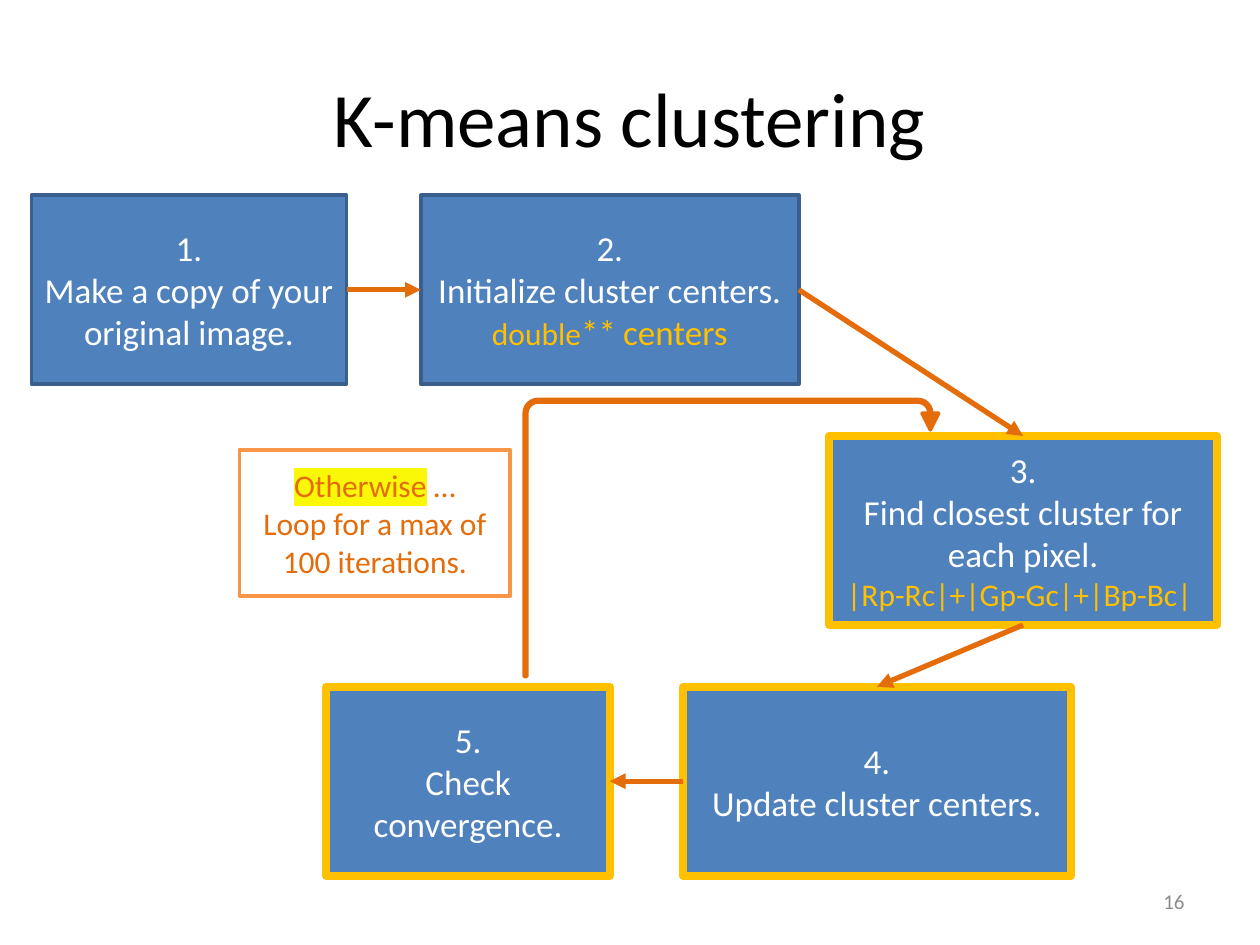
from lxml.etree import SubElement
from pptx import Presentation
from pptx.dml.color import RGBColor
from pptx.enum.shapes import MSO_CONNECTOR, MSO_SHAPE
from pptx.enum.text import MSO_ANCHOR, PP_ALIGN
from pptx.oxml.ns import qn
from pptx.util import Inches, Pt

FONT = "Calibri"
WHITE = RGBColor(0xFF, 0xFF, 0xFF)
BLACK = RGBColor(0, 0, 0)
GRAY = RGBColor(0x8C, 0x8C, 0x8C)
BLUE = RGBColor(0x4F, 0x81, 0xBD)
NAVY = RGBColor(0x3A, 0x5F, 0x8C)
GOLD = RGBColor(0xFF, 0xC0, 0x00)
ORANGE = RGBColor(0xE4, 0x6C, 0x0A)
PEACH = RGBColor(0xF7, 0x96, 0x46)
YELLOW = RGBColor(0xFA, 0xF8, 0x06)

TOP, LOW, HIGH = 1.55, 5.45, 1.5
STEPS = [
    ((0.25, TOP, 2.5, HIGH), NAVY, 2,
     ["1.", "Make a copy of your original image."], []),
    ((3.34, TOP, 3, HIGH), NAVY, 2,
     ["2.", "Initialize cluster centers."],
     [("double", 18), ("**", 20), (" ", 18), ("centers", 20)]),
    ((6.58, 3.46, 3.08, HIGH), GOLD, 4.5,
     ["3.", "Find closest cluster for each pixel."],
     [("|Rp-Rc|+|Gp-Gc|+|Bp-Bc| ", 18)]),
    ((5.42, LOW, 3.08, HIGH), GOLD, 4.5,
     ["4.", "Update cluster centers."], []),
    ((2.59, LOW, 2.25, HIGH), GOLD, 4.5,
     ["5.", "Check convergence."], []),
]
LINKS = [(0, 3, 1, 1), (1, 3, 2, 0), (2, 2, 3, 0), (3, 1, 4, 3)]


def style(para, size, color, align=PP_ALIGN.CENTER):
    """Set the font and alignment of a paragraph."""
    para.alignment = align
    para.font.name = FONT
    para.font.size = Pt(size)
    para.font.color.rgb = color


def add_block(slide, box, kind, fill, edge, width):
    """Draw a shape with the given fill and outline."""
    shape = slide.shapes.add_shape(kind, *map(Inches, box))
    shape.shadow.inherit = False
    if fill is None:
        shape.fill.background()
    else:
        shape.fill.solid()
        shape.fill.fore_color.rgb = fill
    shape.line.color.rgb = edge
    shape.line.width = Pt(width)
    return shape


def fill_text(shape, lines, size, color):
    """Write centred lines, one to a paragraph, and return the frame."""
    frame = shape.text_frame
    frame.word_wrap = True
    frame.vertical_anchor = MSO_ANCHOR.MIDDLE
    frame.text = "\n".join(lines)
    for para in frame.paragraphs:
        style(para, size, color)
    return frame


def add_title(slide, box, text):
    """Place and format the title."""
    title = slide.shapes.title
    title.left, title.top, title.width, title.height = map(Inches, box)
    fill_text(title, [text], 44, BLACK)


def add_number(slide, box, text):
    """Place the page number."""
    shape = slide.shapes.add_textbox(*map(Inches, box))
    frame = fill_text(shape, [text], 12, GRAY)
    frame.paragraphs[0].alignment = PP_ALIGN.RIGHT


def add_step(slide, box, edge, width, lines, code):
    """Draw one step with an optional gold line of code."""
    shape = add_block(slide, box, MSO_SHAPE.RECTANGLE, BLUE, edge, width)
    frame = fill_text(shape, lines, 20, WHITE)
    if code:
        para = frame.add_paragraph()
        style(para, 18, GOLD)
        for text, size in code:
            run = para.add_run()
            run.text = text
            run.font.size = Pt(size)
    return shape


def add_link(slide, start, out, end, side):
    """Join two steps with an arrow."""
    link = slide.shapes.add_connector(MSO_CONNECTOR.STRAIGHT, 0, 0, 0, 0)
    link.begin_connect(start, out)
    link.end_connect(end, side)
    link.line.color.rgb = ORANGE
    link.line.width = Pt(3)
    SubElement(link.line._get_or_add_ln(), qn("a:tailEnd"), type="triangle")
    SubElement(link._element.spPr, qn("a:effectLst"))


def add_note(slide, box):
    """Draw the loop note with its marked first word."""
    shape = add_block(slide, box, MSO_SHAPE.RECTANGLE, None, PEACH, 2)
    lines = ["", "Loop for a max of 100 iterations."]
    para = fill_text(shape, lines, 18, ORANGE).paragraphs[0]
    mark, rest = para.add_run(), para.add_run()
    mark.text, rest.text = "Otherwise", " …"
    glow = SubElement(mark.font._element, qn("a:highlight"))
    SubElement(glow, qn("a:srgbClr"), val=str(YELLOW))


def add_loop(slide, box):
    """Draw the arrow that leads back to step three."""
    loop = add_block(slide, box, MSO_SHAPE.U_TURN_ARROW, ORANGE, ORANGE, 2)
    for spot, value in enumerate([0.01, 0.03, 0.06, 0.44, 0.11]):
        loop.adjustments[spot] = value


def main():
    """Build and save the slide."""
    deck = Presentation()
    deck.slide_width, deck.slide_height = Inches(10), Inches(7.5)
    slide = deck.slides.add_slide(deck.slide_layouts[5])
    add_title(slide, (0.5, 0.3, 9, 1.25), "K-means clustering")
    add_number(slide, (7.17, 6.95, 2.33, 0.4), "16")
    steps = [add_step(slide, *step) for step in STEPS]
    for start, out, end, side in LINKS:
        add_link(slide, steps[start], out, steps[end], side)
    add_note(slide, (1.9, 3.57, 2.15, 1.16))
    add_loop(slide, (4.16, 3.17, 3.29, 2.2))
    deck.save("out.pptx")


if __name__ == "__main__":
    main()
